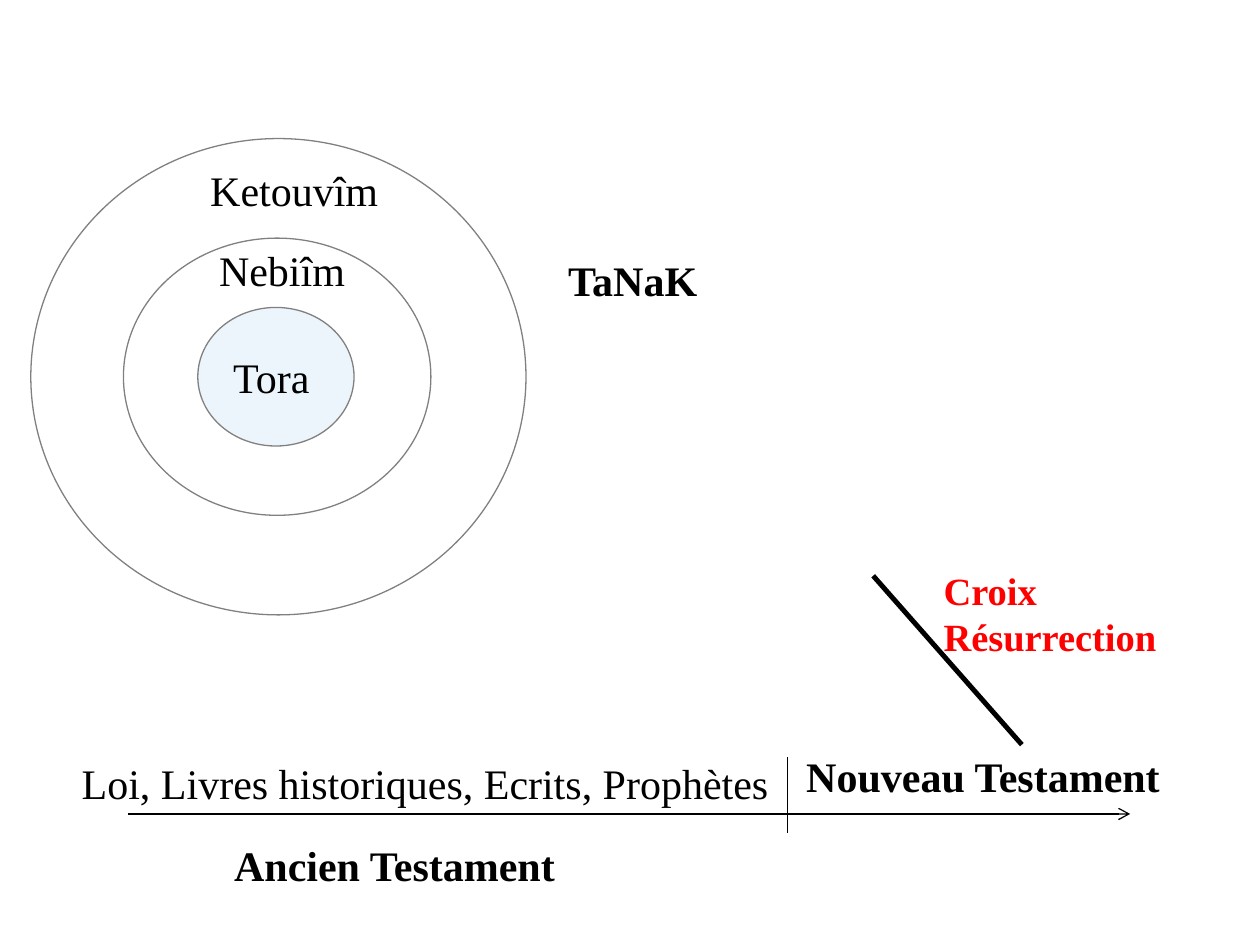
from lxml.etree import SubElement
from pptx import Presentation
from pptx.dml.color import RGBColor
from pptx.enum.shapes import MSO_CONNECTOR as Connector, MSO_SHAPE as Shape
from pptx.enum.text import MSO_ANCHOR as Anchor, PP_ALIGN as Align
from pptx.oxml.ns import qn
from pptx.util import Inches, Pt

FONT = "Times New Roman"
BLACK, RED, GRAY, PALE_BLUE = "000000", "FF0000", "808080", "CFE7F5"
CENTER_Y = 2.99

RINGS = [
    {"center": 2.19, "size": (1.24, 1.1), "fill": PALE_BLUE, "text": "Tora"},
    {"center": 2.2, "size": (2.44, 2.2)},
    {"center": 2.21, "size": (3.93, 3.78)},
]
LABELS = [
    ("Nebiîm", (1.64, 1.89, 1.3, 0.5), {}),
    ("Ketouvîm", (1.57, 1.26, 1.65, 0.5), {}),
    ("Loi, Livres historiques, Ecrits, Prophètes", (0.55, 5.96, 5.75, 0.5), {}),
    ("Nouveau Testament", (6.3, 5.91, 3.15, 0.5), {"bold": True}),
    ("Ancien Testament", (1.76, 6.61, 3.52, 0.55), {"bold": True}),
    ("Croix\nRésurrection", (7.39, 4.45, 2.05, 0.83),
     {"bold": True, "size": 22, "color": RED}),
    ("TaNaK", (4.41, 1.97, 1.35, 0.5), {"bold": True}),
]
LINES = [
    {"ends": (1.02, 6.46, 8.97, 6.46), "arrow": True},
    {"ends": (6.25, 6.61, 6.25, 6.01)},
    {"ends": (6.93, 4.57, 8.11, 5.91), "width": 2.83},
]


def rgb(value):
    """Turn a hex string into a colour."""
    return RGBColor.from_string(value)


def write(shape, text, size=24, bold=False, color=BLACK, anchor=Anchor.TOP):
    """Put left-aligned text, one paragraph a line, into a shape."""
    frame = shape.text_frame
    frame.text = text
    frame.word_wrap = True
    frame.vertical_anchor = anchor
    for paragraph in frame.paragraphs:
        paragraph.alignment = Align.LEFT
        font = paragraph.runs[0].font
        font.name, font.size, font.bold = FONT, Pt(size), bold
        font.color.rgb = rgb(color)


def add_ring(slide, center, size, fill=None, text=None):
    """Draw one ellipse on the shared centre line."""
    width, height = size
    box = (center - width / 2, CENTER_Y - height / 2, width, height)
    ring = slide.shapes.add_shape(Shape.OVAL, *map(Inches, box))
    ring.shadow.inherit = False
    ring.line.color.rgb = rgb(GRAY)
    ring.line.width = Pt(0.75)
    if fill:
        ring.fill.solid()
        ring.fill.fore_color.rgb = rgb(fill)
        color = ring._element.spPr.find(qn("a:solidFill"))[0]
        SubElement(color, qn("a:alpha"), val="40000")
    else:
        ring.fill.background()
    if text:
        write(ring, text, anchor=Anchor.MIDDLE)


def add_line(slide, ends, width=0.75, arrow=False):
    """Draw a straight black line, with an open arrowhead if asked."""
    line = slide.shapes.add_connector(Connector.STRAIGHT, *map(Inches, ends))
    line.line.color.rgb = rgb(BLACK)
    line.line.width = Pt(width)
    if arrow:
        SubElement(line.get_or_add_ln(), qn("a:tailEnd"), type="arrow")
    SubElement(line._element.spPr, qn("a:effectLst"))


def main():
    """Build the slide and save it."""
    presentation = Presentation()
    presentation.slide_width, presentation.slide_height = Inches(10), Inches(7.5)
    slide = presentation.slides.add_slide(presentation.slide_layouts[6])
    for ring in RINGS:
        add_ring(slide, **ring)
    for line in LINES:
        add_line(slide, **line)
    for text, box, style in LABELS:
        write(slide.shapes.add_textbox(*map(Inches, box)), text, **style)
    presentation.save("out.pptx")


if __name__ == "__main__":
    main()
